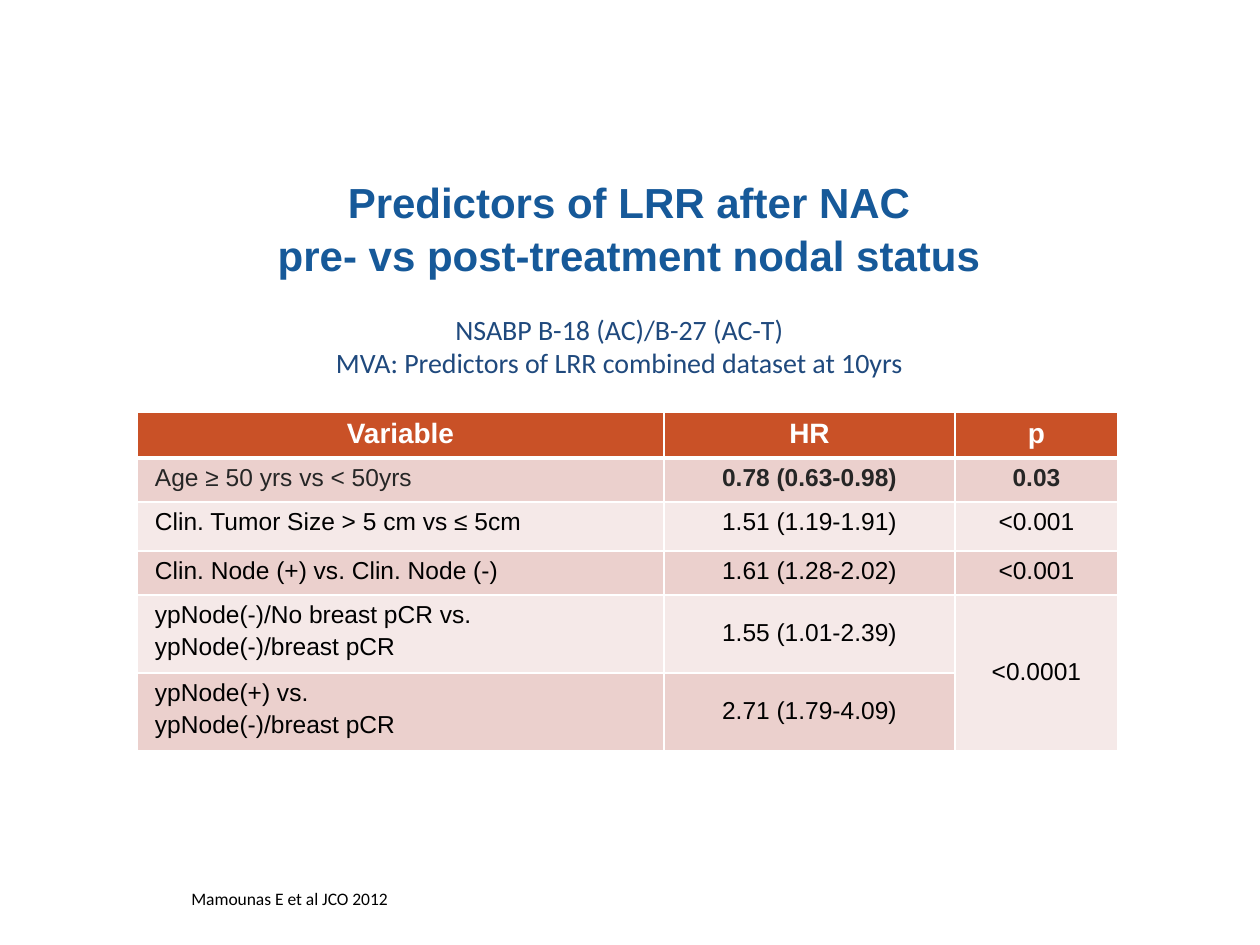
from lxml.etree import SubElement
from pptx import Presentation
from pptx.dml.color import RGBColor
from pptx.enum.text import MSO_ANCHOR, PP_ALIGN
from pptx.oxml.ns import qn
from pptx.util import Emu, Pt

PX_PER_INCH = 126
TITLE_BLUE = RGBColor(0x16, 0x59, 0x99)
NAVY = RGBColor(0x1F, 0x49, 0x7D)
HEADER_ORANGE = RGBColor(0xC9, 0x51, 0x27)
BAND_DARK = RGBColor(0xEB, 0xD0, 0xCD)
BAND_LIGHT = RGBColor(0xF5, 0xE9, 0xE8)
CHARCOAL = RGBColor(0x26, 0x26, 0x26)
WHITE = RGBColor(0xFF, 0xFF, 0xFF)
BLACK = RGBColor(0, 0, 0)


def px(n):
    return Emu(round(n * 914400 / PX_PER_INCH))


def format_text(frame, align, size, font_name, color, bold=False):
    font_values = {"size": Pt(size), "name": font_name, "bold": bold}
    for paragraph in frame.paragraphs:
        paragraph.alignment = align
        for run in paragraph.runs:
            for key, value in font_values.items():
                setattr(run.font, key, value)
            run.font.color.rgb = color


prs = Presentation()
prs.slide_width, prs.slide_height = px(1260), px(945)
slide = prs.slides.add_slide(prs.slide_layouts[5])

# Title
title = slide.shapes.title
title_box = {"left": px(28), "top": px(164), "width": px(1202), "height": px(126)}
for key, value in title_box.items():
    setattr(title, key, value)
title.text_frame.text = "Predictors of LRR after NAC\vpre- vs post-treatment nodal status"
title.text_frame.vertical_anchor = MSO_ANCHOR.MIDDLE
title.text_frame.paragraphs[0].line_spacing = 1.05
format_text(title.text_frame, PP_ALIGN.CENTER, 24, "Arial", TITLE_BLUE, True)

# Table of predictors
rows = [
    ("Variable", "HR", "p"),
    ("Age ≥ 50 yrs vs < 50yrs", "0.78 (0.63-0.98)", "0.03"),
    ("Clin. Tumor Size > 5 cm vs ≤ 5cm", "1.51 (1.19-1.91)", "<0.001"),
    ("Clin. Node (+) vs. Clin. Node (-)", "1.61 (1.28-2.02)", "<0.001"),
    ("ypNode(-)/No breast pCR vs.\nypNode(-)/breast pCR", "1.55 (1.01-2.39)", "<0.0001"),
    ("ypNode(+) vs.\nypNode(-)/breast pCR", "2.71 (1.79-4.09)", ""),
]
column_widths = [527, 291, 163]
row_heights = [46, 44, 49, 44, 78, 78]
predictors = slide.shapes.add_table(
    len(rows), len(column_widths), px(137), px(412),
    px(sum(column_widths)), px(sum(row_heights))).table
for column, width in zip(predictors.columns, column_widths):
    column.width = px(width)
for row, height in zip(predictors.rows, row_heights):
    row.height = px(height)
predictors.cell(4, 2).merge(predictors.cell(5, 2))

cell_margins = {"margin_left": px(18), "margin_right": px(18),
                "margin_top": px(9), "margin_bottom": px(9)}
for r, row_texts in enumerate(rows):
    header = r == 0
    for c, text in enumerate(row_texts):
        cell = predictors.cell(r, c)
        for key, value in cell_margins.items():
            setattr(cell, key, value)

        # White rules, heavier below the header
        heavy_side = {0: "lnB", 1: "lnT"}.get(r)
        for side in ("lnL", "lnR", "lnT", "lnB"):
            width = Pt(3 if side == heavy_side else 1)
            rule = SubElement(cell._tc.get_or_add_tcPr(), qn(f"a:{side}"), w=str(width))
            rule_fill = SubElement(rule, qn("a:solidFill"))
            SubElement(rule_fill, qn("a:srgbClr"), val=str(WHITE))
        cell.fill.solid()
        cell.fill.fore_color.rgb = (
            HEADER_ORANGE if header else BAND_DARK if r % 2 else BAND_LIGHT)

        if not text:
            continue
        cell.text_frame.text = text
        middle = header or (r >= 4 and c > 0)
        cell.vertical_anchor = MSO_ANCHOR.MIDDLE if middle else MSO_ANCHOR.TOP
        for i, paragraph in enumerate(cell.text_frame.paragraphs):
            paragraph.line_spacing = 0.9
            if i:
                paragraph.space_before = Pt(4)
        format_text(
            cell.text_frame,
            PP_ALIGN.CENTER if header or c else PP_ALIGN.LEFT,
            16 if header else 14, "Arial",
            WHITE if header else CHARCOAL if r == 1 else BLACK,
            header or (r == 1 and c > 0))

# Subtitle and citation
captions = [
    ("NSABP B-18 (AC)/B-27 (AC-T)\vMVA: Predictors of LRR combined dataset at 10yrs",
     (84, 306, 1071, 81), True, PP_ALIGN.CENTER, 16, NAVY),
    ("Mamounas E et al JCO 2012", (179, 882, 226, 34), False, PP_ALIGN.LEFT, 10, BLACK),
]
for text, box, wrap, align, size, color in captions:
    caption = slide.shapes.add_textbox(*map(px, box))
    caption.text_frame.word_wrap = wrap
    caption.text_frame.text = text
    format_text(caption.text_frame, align, size, "Calibri", color)

prs.save("out.pptx")
